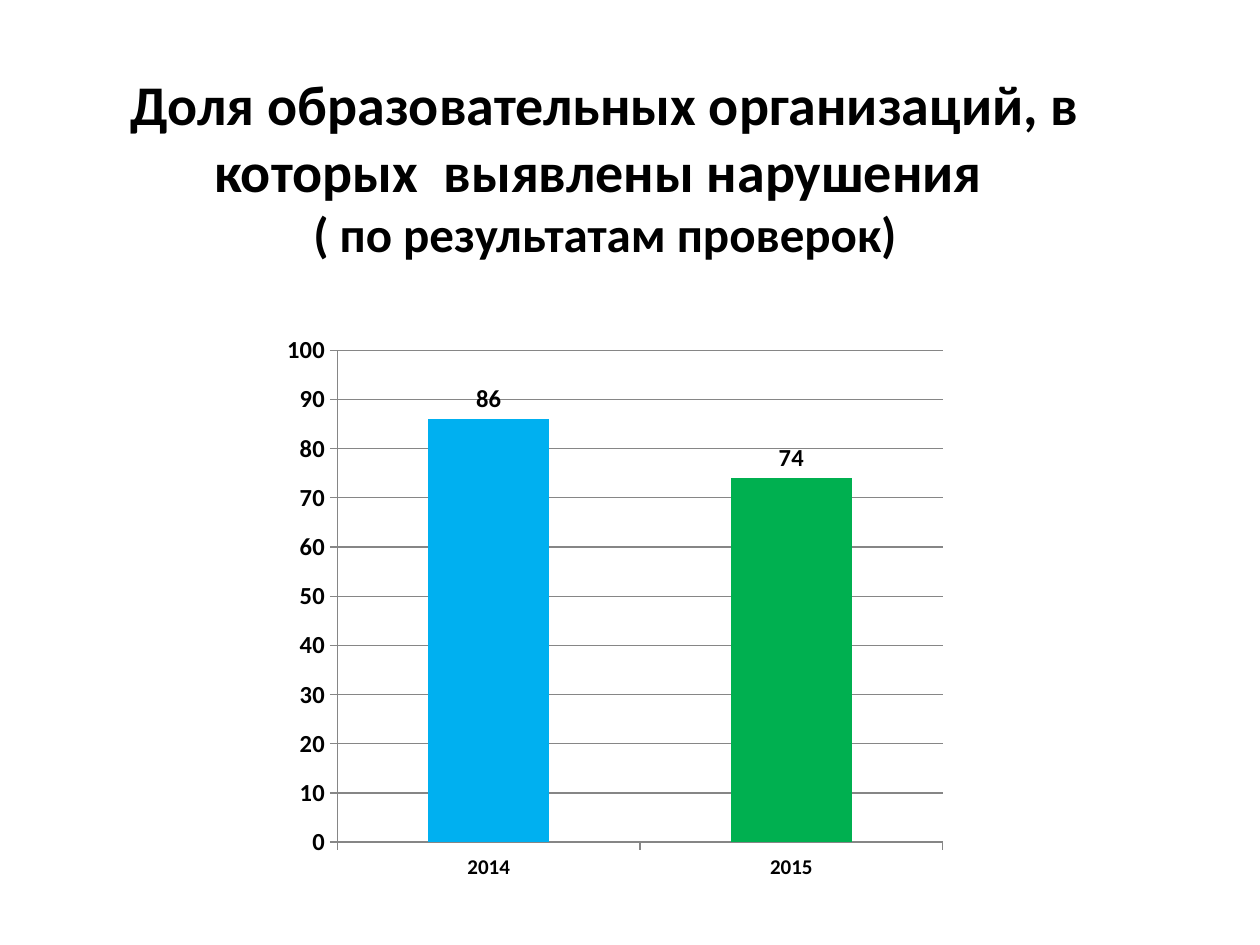
from dataclasses import dataclass

from pptx import Presentation
from pptx import util as u
from pptx.chart.data import CategoryChartData
from pptx.dml.color import RGBColor
from pptx.enum import chart as charts, text

FONT = "Calibri"
COLORS = {
    "text": "000000",
    "series": "92D050",
    "blue": "00B0F0",
    "green": "00B050",
    "line": "868686",
}


@dataclass(frozen=True)
class Bar:
    year: str
    share: int
    color: str


@dataclass(frozen=True)
class Span:
    words: str
    size: int


BARS = [Bar("2014", 86, "blue"), Bar("2015", 74, "green")]
TITLE_LINES = [
    Span("Доля образовательных организаций, в которых  выявлены нарушения ", 32),
    Span("( по результатам проверок)", 28),
]


def rgb(name: str) -> RGBColor:
    return RGBColor.from_string(COLORS[name])


def style_font(font, size: int, bold: bool = True) -> None:
    font.name = FONT
    font.size = u.Pt(size)
    font.bold = bold
    font.color.rgb = rgb("text")


def fill_title(page, lines: list[Span]) -> None:
    box = page.shapes.title
    box.left, box.top = u.Inches(0.51), u.Inches(0.29)
    box.width, box.height = u.Inches(8.58), u.Inches(2.05)
    frame = box.text_frame
    frame.word_wrap = True
    frame.auto_size = text.MSO_AUTO_SIZE.NONE
    frame.vertical_anchor = text.MSO_ANCHOR.MIDDLE
    para = frame.paragraphs[0]
    para.alignment = text.PP_ALIGN.CENTER
    for index, line in enumerate(lines):
        if index:
            para.add_line_break()
        span = para.add_run()
        span.text = line.words
        style_font(span.font, line.size)


def style_axis(axis, size: int) -> None:
    axis.major_tick_mark = charts.XL_TICK_MARK.OUTSIDE
    axis.minor_tick_mark = charts.XL_TICK_MARK.NONE
    axis.format.line.color.rgb = rgb("line")
    style_font(axis.tick_labels.font, size)


def add_share_chart(page, bars: list[Bar]) -> None:
    data = CategoryChartData()
    data.categories = [bar.year for bar in bars]
    data.add_series("Series 1", [bar.share for bar in bars])
    chart = page.shapes.add_chart(
        charts.XL_CHART_TYPE.COLUMN_CLUSTERED,
        u.Inches(2.17), u.Inches(2.57), u.Inches(5.42), u.Inches(4.5), data,
    ).chart
    chart.has_title = False
    chart.has_legend = False
    style_font(chart.font, 10, bold=False)

    style_axis(chart.category_axis, 12)
    values = chart.value_axis
    style_axis(values, 14)
    values.minimum_scale, values.maximum_scale = 0, 100
    values.major_unit = 10
    values.has_major_gridlines = True
    values.major_gridlines.format.line.color.rgb = rgb("line")

    plot = chart.plots[0]
    plot.gap_width = 150
    plot.vary_by_categories = False
    plot.has_data_labels = True
    labels = plot.data_labels
    labels.show_value = True
    labels.position = charts.XL_LABEL_POSITION.OUTSIDE_END
    style_font(labels.font, 14)

    series = plot.series[0]
    series.format.fill.solid()
    series.format.fill.fore_color.rgb = rgb("series")
    for index, bar in enumerate(bars):
        fill = series.points[index].format.fill
        fill.solid()
        fill.fore_color.rgb = rgb(bar.color)


def main() -> None:
    deck = Presentation()
    deck.slide_width, deck.slide_height = u.Inches(10), u.Inches(7.5)
    page = deck.slides.add_slide(deck.slide_layouts.get_by_name("Title Only"))
    fill_title(page, TITLE_LINES)
    add_share_chart(page, BARS)
    deck.save("out.pptx")


if __name__ == "__main__":
    main()
